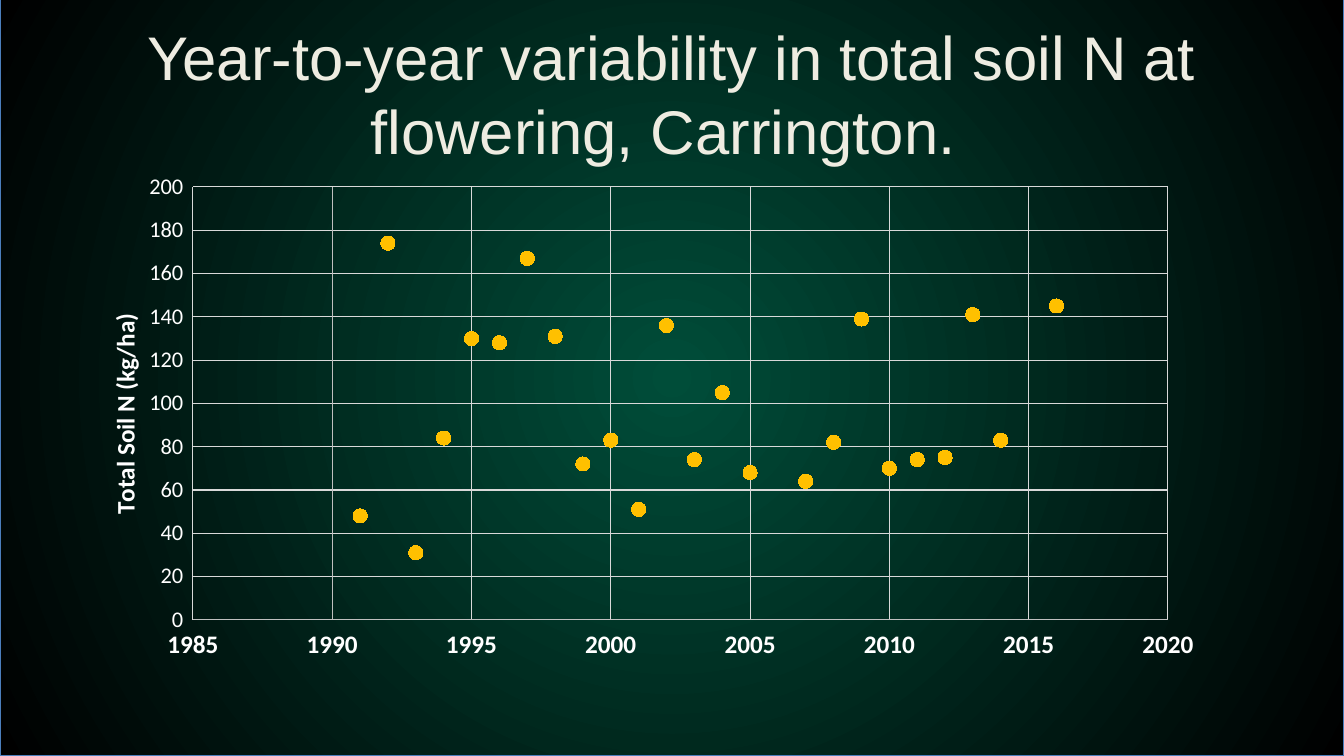
from lxml import etree
from pptx import Presentation
from pptx.chart.data import XyChartData
from pptx.dml.color import RGBColor
from pptx.enum.chart import XL_CHART_TYPE as ChartType, XL_MARKER_STYLE as Marker
from pptx.enum.chart import XL_TICK_LABEL_POSITION as LabelPosition, XL_TICK_MARK as TickMark
from pptx.enum.shapes import MSO_SHAPE as Shape
from pptx.enum.text import MSO_ANCHOR as Anchor, MSO_AUTO_SIZE as AutoSize, PP_ALIGN as Align
from pptx.oxml import parse_xml
from pptx.oxml.ns import nsdecls, qn
from pptx.util import Emu, Pt

SCALE = 914400 / 100.8
WIDTH, HEIGHT = 1344, 756
CHART_BOX = (76, 163, 1141, 501)
PLOT_BOX = (193, 187, 975, 433)
AXIS_TITLE_AT = (103, 309)


def px(*lengths):
    return [Emu(round(length * SCALE)) for length in lengths]


def paint(target, color):
    target.solid()
    target.fore_color.rgb = RGBColor.from_string(color)


deck = Presentation()
deck.slide_width, deck.slide_height = px(WIDTH, HEIGHT)
page = deck.slides.add_slide(deck.slide_layouts[5])

backdrop = page.shapes.add_shape(Shape.RECTANGLE, *px(0, 0, WIDTH, HEIGHT))
backdrop.shadow.inherit = False
backdrop.fill.gradient()
for stop, color, position in zip(backdrop.fill.gradient_stops, ("004D39", "000000"), (0, 1)):
    stop.color.rgb = RGBColor.from_string(color)
    stop.position = position
gradient = backdrop.fill._xPr.find(qn("a:gradFill"))
gradient.replace(gradient.find(qn("a:lin")), parse_xml(
    f'<a:path {nsdecls("a")} path="circle">'
    '<a:fillToRect l="50000" t="50000" r="50000" b="50000"/></a:path>'))
paint(backdrop.line.fill, "4B7EBC")
backdrop.line.width = Pt(0.75)
page.shapes._spTree.insert(2, backdrop._element)

title = page.shapes.title
title.left, title.top, title.width, title.height = px(67, 30, 1210, 126)
frame = title.text_frame
for name, value in {"word_wrap": True, "auto_size": AutoSize.NONE,
                    "vertical_anchor": Anchor.MIDDLE}.items():
    setattr(frame, name, value)
para = frame.paragraphs[0]
para.alignment = Align.CENTER
span = para.add_run()
span.text = "Year-to-year variability in total soil N at flowering, Carrington. "
span.font.name, span.font.size = "Arial", Pt(44)
paint(span.font.fill, "EEECE1")

years = [*range(1991, 2006), *range(2007, 2015), 2016]
soil_nitrogen = [48, 174, 31, 84, 130, 128, 167, 131, 72, 83, 51, 136,
                 74, 105, 68, 64, 82, 139, 70, 74, 75, 141, 83, 145]
data = XyChartData()
points = data.add_series("Series 1")
for year, amount in zip(years, soil_nitrogen):
    points.add_data_point(year, amount)

chart = page.shapes.add_chart(ChartType.XY_SCATTER, *px(*CHART_BOX), data).chart
chart.has_legend = chart.has_title = False
chart.font.name, chart.font.size = "Calibri", Pt(10)
chart.plots[0].vary_by_categories = False

series = chart.plots[0].series[0]
series.format.line.fill.background()
series.marker.style, series.marker.size = Marker.CIRCLE, 10
paint(series.marker.format.fill, "FFC000")
paint(series.marker.format.line.fill, "FFC000")

axes = (
    (chart.category_axis, 1985, 2020, 5, 18, True),
    (chart.value_axis, 0, 200, 20, 16, False),
)
for axis, low, high, step, size, bold in axes:
    for name, value in {
        "minimum_scale": low, "maximum_scale": high, "major_unit": step,
        "has_major_gridlines": True, "major_tick_mark": TickMark.NONE,
        "minor_tick_mark": TickMark.NONE, "tick_label_position": LabelPosition.LOW,
    }.items():
        setattr(axis, name, value)
    for line, color in ((axis.format.line, "BFBFBF"),
                        (axis.major_gridlines.format.line, "D9D9D9")):
        paint(line.fill, color)
        line.width = Pt(0.75)
    labels = axis.tick_labels
    labels.number_format, labels.number_format_is_linked = "0", False
    labels.font.name, labels.font.size, labels.font.bold = "Calibri", Pt(size), bold
    paint(labels.font.fill, "FFFFFF")
chart.category_axis.crosses_at = 1990

axis_title = chart.value_axis.axis_title
axis_title.text_frame.text = "Total Soil N (kg/ha)"
body = axis_title.text_frame._txBody.find(qn("a:bodyPr"))
body.set("rot", "-5400000")
body.set("vert", "horz")
title_font = axis_title.text_frame.paragraphs[0].runs[0].font
title_font.name, title_font.size, title_font.bold = "Calibri", Pt(18), True
paint(title_font.fill, "FFFFFF")

left, top, width, height = CHART_BOX
plot_area = chart._chartSpace.chart.plotArea
for owner, place, target in (
    (plot_area, PLOT_BOX, "inner"),
    (axis_title._element, AXIS_TITLE_AT, None),
):
    for old in owner.findall(qn("c:layout")):
        owner.remove(old)
    layout = parse_xml(f'<c:layout {nsdecls("c")}><c:manualLayout/></c:layout>')
    settings = [("layoutTarget", target)] if target else []
    settings += [("xMode", "edge"), ("yMode", "edge")]
    settings += [("x", (place[0] - left) / width), ("y", (place[1] - top) / height)]
    if target:
        settings += [("w", place[2] / width), ("h", place[3] / height)]
    for name, value in settings:
        etree.SubElement(layout[0], qn(f"c:{name}")).set("val", str(value))
    owner.insert(0 if target else 1, layout)

deck.save("out.pptx")
